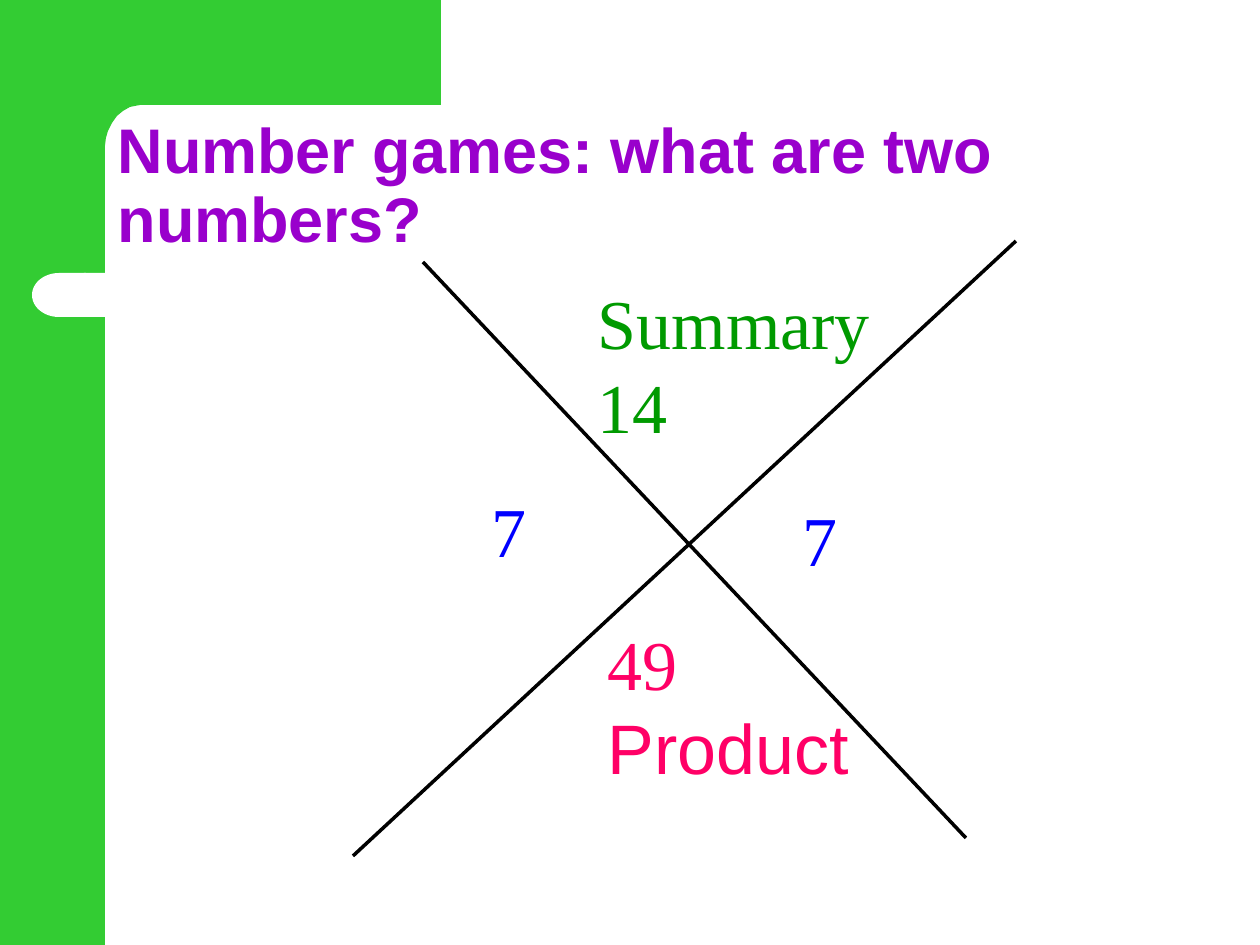
"""Build the number games slide with a crossed diagram of sum and product."""
import pptx
import pptx.util
import pptx.dml.color
import pptx.enum.shapes
import pptx.enum.text
import pptx.oxml.ns
import lxml.etree

PX = 914400 // 126
SHAPES = pptx.enum.shapes.MSO_SHAPE
ANCHORS = pptx.enum.text.MSO_ANCHOR
SERIF, SANS = "Times New Roman", "Arial"
GREEN, WHITE, BLACK, PURPLE = "33CC33", "FFFFFF", "000000", "9900CC"
SUM_GREEN, PINK, BLUE = "009A00", "FF0066", "0000FF"

TITLE = "Number games: what are two numbers?"
TITLE_AREA = (105, 105, 1134, 157)
SIDEBAR = (SHAPES.RECTANGLE, (0, 0, 105, 945), GREEN)
CORNER = [(441, 0), (441, 105), (146, 105), (140, 105), (130, 107), (123, 111),
          (117, 116), (112, 123), (108, 131), (106, 138), (105, 146),
          (105, 161), (63, 161), (63, 0)]
NOTCH = [
    (SHAPES.RECTANGLE, (84, 273, 966, 44), WHITE),
    (SHAPES.FLOWCHART_DELAY, (32, 273, 54, 44), WHITE),
]
CROSS = [(423, 262, 966, 838), (1016, 241, 353, 856)]
LABELS = [
    ((595, 614, 524, 243), 13, PINK, [("49", SERIF), ("Product", SANS)]),
    ((585, 273, 544, 281), 13, SUM_GREEN, [("Summary", SERIF), ("14", SERIF)]),
    ((478, 481, 107, 96), 13, BLUE, [("7", SERIF)]),
    ((771, 490, 142, 87), 32, BLUE, [("7", SERIF)]),
]


def px(values):
    return [value * PX for value in values]


def color(hex_text):
    return pptx.dml.color.RGBColor.from_string(hex_text)


def apply(target, values):
    for name, value in values.items():
        setattr(target, name, value)


def paint(shape, fill):
    shape.shadow.inherit = False
    shape.fill.solid()
    shape.fill.fore_color.rgb = color(fill)
    shape.line.fill.background()


def add_block(page, kind, area, fill):
    block = page.shapes.add_shape(kind, *px(area))
    paint(block, fill)
    return block


def add_corner(page):
    builder = page.shapes.build_freeform(*CORNER[0], scale=PX)
    builder.add_line_segments(CORNER[1:], close=True)
    paint(builder.convert_to_shape(), GREEN)


def add_line(page, ends):
    line = page.shapes.add_connector(
        pptx.enum.shapes.MSO_CONNECTOR.STRAIGHT, *px(ends))
    line.line.color.rgb = color(BLACK)
    line.line.width = pptx.util.Pt(2)
    lxml.etree.SubElement(line._element.spPr, pptx.oxml.ns.qn("a:effectLst"))


def write(para, text, face, size, hex_text, bold=False):
    span = para.add_run()
    span.text = text
    apply(span.font, {"name": face, "size": pptx.util.Pt(size), "bold": bold})
    span.font.color.rgb = color(hex_text)


def add_label(page, area, indent, hex_text, lines):
    frame = page.shapes.add_textbox(*px(area)).text_frame
    apply(frame, {"word_wrap": True, "margin_left": indent * PX})
    for index, (text, face) in enumerate(lines):
        para = frame.add_paragraph() if index else frame.paragraphs[0]
        write(para, text, face, 40, hex_text)


def set_title(page):
    title = page.shapes.title
    apply(title, dict(zip(("left", "top", "width", "height"), px(TITLE_AREA))))
    apply(title.text_frame, {"word_wrap": True,
                             "vertical_anchor": ANCHORS.BOTTOM,
                             "auto_size": pptx.enum.text.MSO_AUTO_SIZE.NONE})
    para = title.text_frame.paragraphs[0]
    apply(para, {"alignment": pptx.enum.text.PP_ALIGN.LEFT,
                 "line_spacing": 0.9})
    write(para, TITLE, SANS, 36, PURPLE, True)


def main():
    deck = pptx.Presentation()
    apply(deck, {"slide_width": 1260 * PX, "slide_height": 945 * PX})
    page = deck.slides.add_slide(deck.slide_layouts[5])
    set_title(page)
    add_block(page, *SIDEBAR)
    add_corner(page)
    bar, cap = [add_block(page, *part) for part in NOTCH]
    cap._element.spPr.find(pptx.oxml.ns.qn("a:xfrm")).set("flipH", "1")
    for ends in CROSS:
        add_line(page, ends)
    for label in LABELS:
        add_label(page, *label)
    deck.save("out.pptx")


if __name__ == "__main__":
    main()
